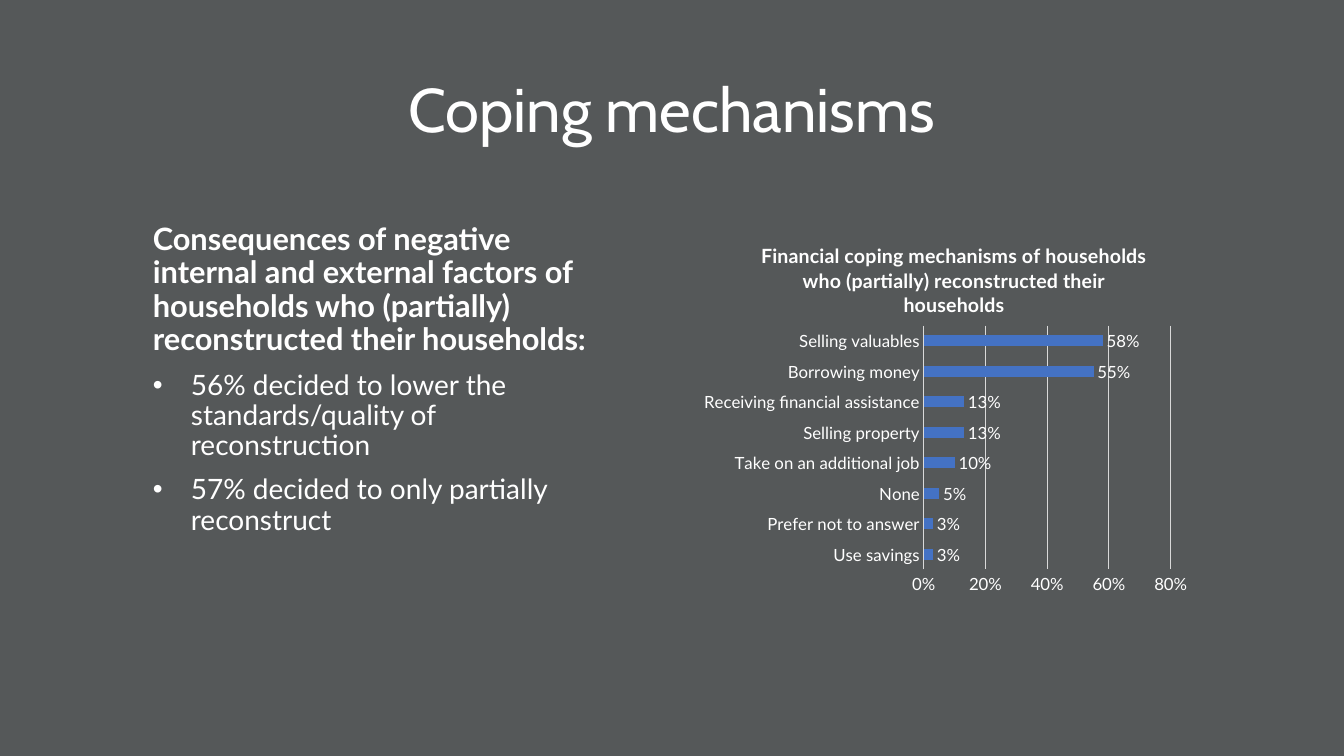
from lxml import etree
from pptx import Presentation
from pptx.chart.data import CategoryChartData
from pptx.dml.color import RGBColor
from pptx.enum.chart import XL_CHART_TYPE, XL_LABEL_POSITION, XL_TICK_MARK
from pptx.enum.text import MSO_ANCHOR, PP_ALIGN
from pptx.oxml.ns import qn
from pptx.util import Emu, Pt

BAR = XL_CHART_TYPE.BAR_CLUSTERED
OUTSIDE_END = XL_LABEL_POSITION.OUTSIDE_END
NO_TICK = XL_TICK_MARK.NONE
TOP, MIDDLE = MSO_ANCHOR.TOP, MSO_ANCHOR.MIDDLE
LEFT, CENTER = PP_ALIGN.LEFT, PP_ALIGN.CENTER

WHITE = RGBColor(0xFF, 0xFF, 0xFF)
SLATE = RGBColor(0x55, 0x58, 0x59)
BLUE = RGBColor(0x44, 0x72, 0xC4)
GRID = RGBColor(0xD9, 0xD9, 0xD9)

WIDTH, HEIGHT = 1344, 756
EMU_PER_PX = 12192000 / WIDTH
BULLET_INDENT = 38

HEADING = "Coping mechanisms"
INTRO = ("Consequences of negative internal and external factors of households "
         "who (partially) reconstructed their households:")
FINDINGS = [
    "56% decided to lower the standards/quality of reconstruction",
    "57% decided to only partially reconstruct",
]
CHART_TITLE = ("Financial coping mechanisms of households "
               "who (partially) reconstructed their households")
MECHANISMS = {
    "Use savings": 0.03,
    "Prefer not to answer": 0.03,
    "None": 0.05,
    "Take on an additional job": 0.1,
    "Selling property": 0.13,
    "Receiving financial assistance": 0.13,
    "Borrowing money": 0.55,
    "Selling valuables": 0.58,
}


def px(n):
    return Emu(round(n * EMU_PER_PX))


class SlideBuilder:
    """Holds the slide style and adds each kind of element."""

    def __init__(self, prs):
        self.heading_font, self.body_font = "Cabin", "Lato"
        self.s = prs.slides.add_slide(prs.slide_layouts[6])
        fill = self.s.background.fill
        fill.solid()
        fill.fore_color.rgb = SLATE

    def style(self, font, size, bold=False, name=None):
        font.name = name or self.body_font
        font.size = Pt(size)
        font.bold = bold
        font.color.rgb = WHITE

    def text_box(self, x, y, w, h, anchor=TOP):
        tf = self.s.shapes.add_textbox(px(x), px(y), px(w), px(h)).text_frame
        tf.word_wrap = True
        tf.vertical_anchor = anchor
        return tf

    def paragraph(self, tf, text, size, bold=False, name=None, align=LEFT):
        p = tf.add_paragraph() if tf.text else tf.paragraphs[0]
        p.text = text
        p.alignment = align
        p.line_spacing = 0.9
        p.space_before = Pt(10)
        self.style(p.font, size, bold, name)
        return p

    def bullet(self, tf, text, size):
        pPr = self.paragraph(tf, text, size)._p.get_or_add_pPr()
        pPr.set("marL", str(px(BULLET_INDENT)))
        pPr.set("indent", str(-px(BULLET_INDENT)))
        font = etree.Element(qn("a:buFont"), typeface="Arial")
        mark = etree.Element(qn("a:buChar"), char="•")
        pPr.find(qn("a:spcBef")).addnext(font)
        font.addnext(mark)

    def place(self, element, **position):
        layout = element.find(qn("c:layout"))
        if layout is None:
            layout = etree.Element(qn("c:layout"))
            text = element.find(qn("c:tx"))
            if text is None:
                element.insert(0, layout)
            else:
                text.addnext(layout)
        for child in list(layout):
            layout.remove(child)
        manual = etree.SubElement(layout, qn("c:manualLayout"))
        for tag, value in position.items():
            etree.SubElement(manual, qn(f"c:{tag}"), val=str(value))

    def bar_chart(self, x, y, w, h, title, values):
        data = CategoryChartData(number_format="0%")
        data.categories = list(values)
        data.add_series("Series 1", list(values.values()))
        chart = self.s.shapes.add_chart(
            BAR, px(x), px(y), px(w), px(h), data).chart
        self.style(chart.font, 12)
        chart.has_legend = False

        p = chart.chart_title.text_frame.paragraphs[0]
        p.text = title
        self.style(p.font, 14, bold=True)
        chart.chart_title.include_in_layout = False

        cat_axis, val_axis = chart.category_axis, chart.value_axis
        for axis in (cat_axis, val_axis):
            axis.major_tick_mark = axis.minor_tick_mark = NO_TICK
            self.style(axis.tick_labels.font, 12)
        val_axis.minimum_scale, val_axis.maximum_scale = 0, 0.8
        val_axis.major_unit = 0.2
        val_axis.tick_labels.number_format = "0%"
        val_axis.tick_labels.number_format_is_linked = False
        val_axis.has_major_gridlines = True
        val_axis.format.line.fill.background()
        for line in (cat_axis.format.line, val_axis.major_gridlines.format.line):
            line.color.rgb = GRID
            line.width = Pt(0.75)

        plot = chart.plots[0]
        plot.gap_width = 182
        plot.vary_by_categories = False
        plot.has_data_labels = True
        labels = plot.data_labels
        labels.show_value = True
        labels.position = OUTSIDE_END
        labels.number_format = "0%"
        labels.number_format_is_linked = False
        self.style(labels.font, 12)
        fill = plot.series[0].format.fill
        fill.solid()
        fill.fore_color.rgb = BLUE

        self.place(chart.chart_title._element,
                   xMode="edge", yMode="edge", x=0.12, y=0.05)
        self.place(chart._chartSpace.chart.plotArea, layoutTarget="inner",
                   xMode="edge", yMode="edge", x=0.45, y=0.28, w=0.49, h=0.64)


def main():
    prs = Presentation()
    prs.slide_width, prs.slide_height = px(WIDTH), px(HEIGHT)
    slide = SlideBuilder(prs)

    tf = slide.text_box(92, 40, 1160, 146, MIDDLE)
    slide.paragraph(tf, HEADING, 44, name=slide.heading_font, align=CENTER)

    tf = slide.text_box(143, 219, 472, 393)
    slide.paragraph(tf, INTRO, 22, bold=True)
    for finding in FINDINGS:
        slide.bullet(tf, finding, 20)

    slide.bar_chart(697, 219, 504, 381, CHART_TITLE, MECHANISMS)
    prs.save("out.pptx")


if __name__ == "__main__":
    main()
